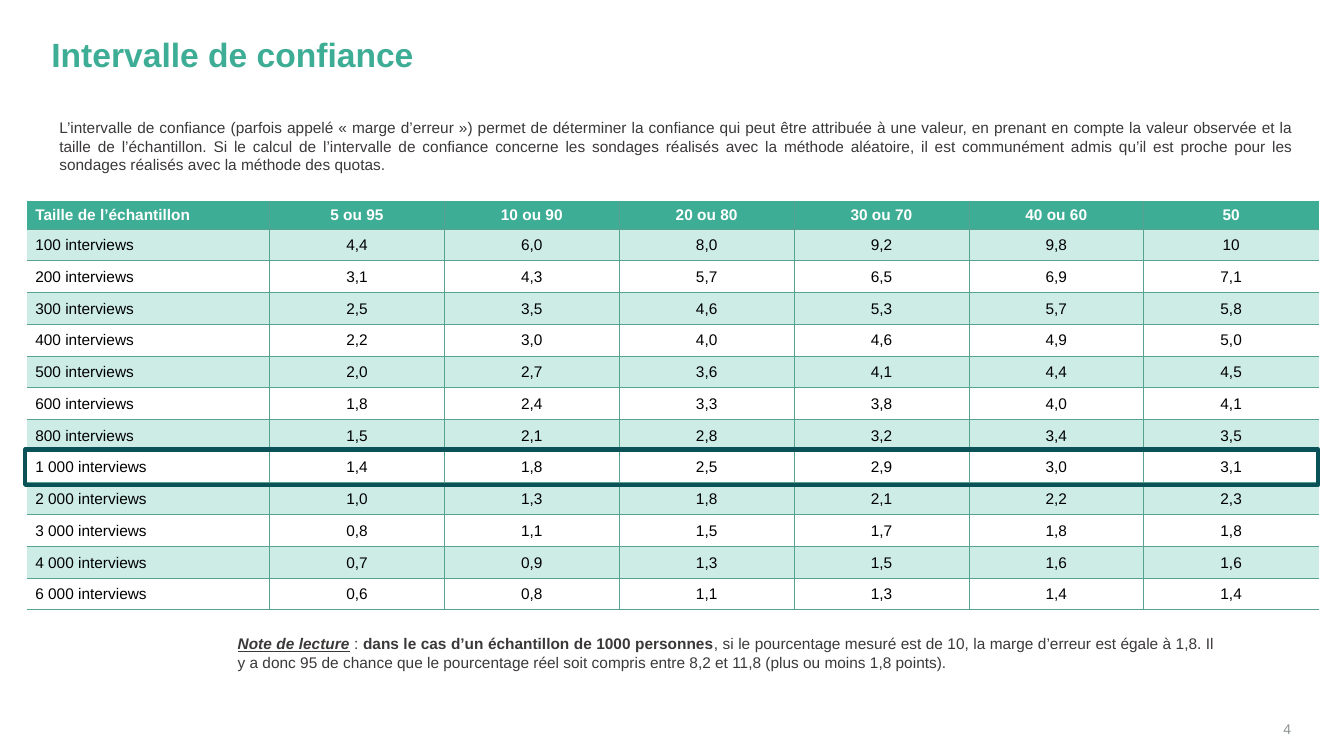
from dataclasses import dataclass

from lxml.etree import SubElement
from pptx import Presentation
from pptx.dml.color import RGBColor
from pptx.enum.shapes import MSO_SHAPE as Preset
from pptx.enum.text import MSO_ANCHOR as Anchor, PP_ALIGN as Align
from pptx.oxml import parse_xml
from pptx.oxml.ns import nsdecls, qn
from pptx.util import Emu, Pt

EMU_PER_PX = 4572  # 200 px to the inch


def px(length):
    return Emu(length * EMU_PER_PX)


@dataclass(frozen=True)
class Theme:
    font: str = "Arial"
    green: str = "3EAD95"
    pale: str = "CCECE5"
    grid: str = "58A291"
    petrol: str = "0B5258"
    ink: str = "3B3838"
    grey: str = "8C9491"
    black: str = "000000"
    white: str = "FFFFFF"
    title: int = 24
    body: int = 11
    small: int = 10
    grid_width: float = 0.5
    frame_width: float = 3


HEADINGS = ["Taille de l’échantillon", "5 ou 95", "10 ou 90", "20 ou 80",
            "30 ou 70", "40 ou 60", "50"]
MARGINS = {
    "100": "4,4 6,0 8,0 9,2 9,8 10",
    "200": "3,1 4,3 5,7 6,5 6,9 7,1",
    "300": "2,5 3,5 4,6 5,3 5,7 5,8",
    "400": "2,2 3,0 4,0 4,6 4,9 5,0",
    "500": "2,0 2,7 3,6 4,1 4,4 4,5",
    "600": "1,8 2,4 3,3 3,8 4,0 4,1",
    "800": "1,5 2,1 2,8 3,2 3,4 3,5",
    "1 000": "1,4 1,8 2,5 2,9 3,0 3,1",
    "2 000": "1,0 1,3 1,8 2,1 2,2 2,3",
    "3 000": "0,8 1,1 1,5 1,7 1,8 1,8",
    "4 000": "0,7 0,9 1,3 1,5 1,6 1,6",
    "6 000": "0,6 0,8 1,1 1,3 1,4 1,4",
}
INTRO = (
    "L’intervalle de confiance (parfois appelé « marge d’erreur ») permet de "
    "déterminer la confiance qui peut être attribuée à une valeur, en prenant en "
    "compte la valeur observée et la taille de l’échantillon. Si le calcul de "
    "l’intervalle de confiance concerne les sondages réalisés avec la méthode "
    "aléatoire, il est communément admis qu’il est proche pour les sondages "
    "réalisés avec la méthode des quotas."
)
READING_NOTE = [
    ("Note de lecture", {"bold": True, "italic": True, "underline": True}),
    (" : ", {}),
    ("dans le cas d’un échantillon de 1000 personnes", {"bold": True}),
    (", si le pourcentage mesuré est de 10, la marge d’erreur est égale à 1,8. "
     "Il y a donc 95 de chance que le pourcentage réel soit compris entre 8,2 et "
     "11,8 (plus ou moins 1,8 points).", {}),
]


def set_all(target, values):
    for name, value in values.items():
        setattr(target, name, value)


class SlideBuilder:
    def __init__(self, page, theme):
        self.page = page
        self.theme = theme

    def add_spans(self, para, spans, size, color, **para_format):
        """Fill a paragraph with (text, font format) spans."""
        set_all(para, para_format)
        for text, span_format in spans:
            span = para.add_run()
            span.text = text
            set_all(span.font, {"name": self.theme.font, "size": Pt(size), **span_format})
            span.font.color.rgb = RGBColor.from_string(color)

    def text(self, bounds, spans, size, color, inset=(0, 0),
             anchor=Anchor.TOP, **para_format):
        frame = self.page.shapes.add_textbox(*map(px, bounds)).text_frame
        across, down = map(px, inset)
        set_all(frame, {
            "word_wrap": True, "vertical_anchor": anchor,
            "margin_left": across, "margin_right": across,
            "margin_top": down, "margin_bottom": down,
        })
        self.add_spans(frame.paragraphs[0], spans, size, color, **para_format)

    def borders(self, cell, drawn):
        """Draw the grid line on the sides flagged in drawn, and none elsewhere."""
        properties = cell._tc.get_or_add_tcPr()
        width = Pt(self.theme.grid_width)
        for place, (side, visible) in enumerate(drawn.items()):
            paint = (f'<a:solidFill><a:srgbClr val="{self.theme.grid}"/></a:solidFill>'
                     if visible else "<a:noFill/>")
            line = f'<a:ln{side} {nsdecls("a")} w="{width}">{paint}</a:ln{side}>'
            properties.insert(place, parse_xml(line))

    def table(self, left, top, widths, heights, rows):
        theme = self.theme
        grid = self.page.shapes.add_table(
            len(rows), len(widths), px(left), px(top),
            px(sum(widths)), px(sum(heights))).table
        for column, width in zip(grid.columns, widths):
            column.width = px(width)
        for row, height in zip(grid.rows, heights):
            row.height = px(height)
        for r, values in enumerate(rows):
            fill = theme.green if r == 0 else theme.pale if r % 2 else theme.white
            color = theme.white if r == 0 else theme.black
            for c, value in enumerate(values):
                cell = grid.cell(r, c)
                set_all(cell, {
                    "vertical_anchor": Anchor.MIDDLE,
                    "margin_left": px(2 if c else 16), "margin_right": px(2),
                    "margin_top": px(2), "margin_bottom": 0,
                })
                cell.fill.solid()
                cell.fill.fore_color.rgb = RGBColor.from_string(fill)
                self.borders(cell, {"L": c > 0, "R": c < len(widths) - 1,
                                    "T": r > 0, "B": True})
                self.add_spans(cell.text_frame.paragraphs[0],
                               [(value, {"bold": r == 0})], theme.body, color,
                               alignment=Align.CENTER if c else Align.LEFT)

    def frame(self, bounds):
        """Draw an unfilled rectangle with rounded line joins."""
        box = self.page.shapes.add_shape(Preset.RECTANGLE, *map(px, bounds))
        box.shadow.inherit = False
        box.fill.background()
        box.line.color.rgb = RGBColor.from_string(self.theme.petrol)
        box.line.width = Pt(self.theme.frame_width)
        SubElement(box.line._get_or_add_ln(), qn("a:round"))


def main():
    deck = Presentation()
    set_all(deck, {"slide_width": px(2667), "slide_height": px(1500)})
    theme = Theme()
    slide = SlideBuilder(deck.slides.add_slide(deck.slide_layouts[6]), theme)

    slide.text((102, 76, 2462, 72), [("Intervalle de confiance", {"bold": True})],
               theme.title, theme.green, line_spacing=0.9)
    slide.text((2444, 1414, 118, 48), [("4", {})], theme.small, theme.grey,
               anchor=Anchor.BOTTOM, alignment=Align.RIGHT)
    paragraph_style = {"size": theme.body, "color": theme.ink, "inset": (20, 10),
                       "anchor": Anchor.MIDDLE, "alignment": Align.JUSTIFY}
    slide.text((452, 1248, 1978, 94), READING_NOTE, **paragraph_style)

    rows = [HEADINGS] + [[f"{size} interviews", *margins.split()]
                         for size, margins in MARGINS.items()]
    slide.table(54, 398, [481] + [347] * 6, [56] + [63] * len(MARGINS), rows)

    slide.text((98, 200, 2490, 180), [(INTRO, {})], **paragraph_style)
    slide.frame((50, 892, 2566, 70))
    deck.save("out.pptx")


if __name__ == "__main__":
    main()
